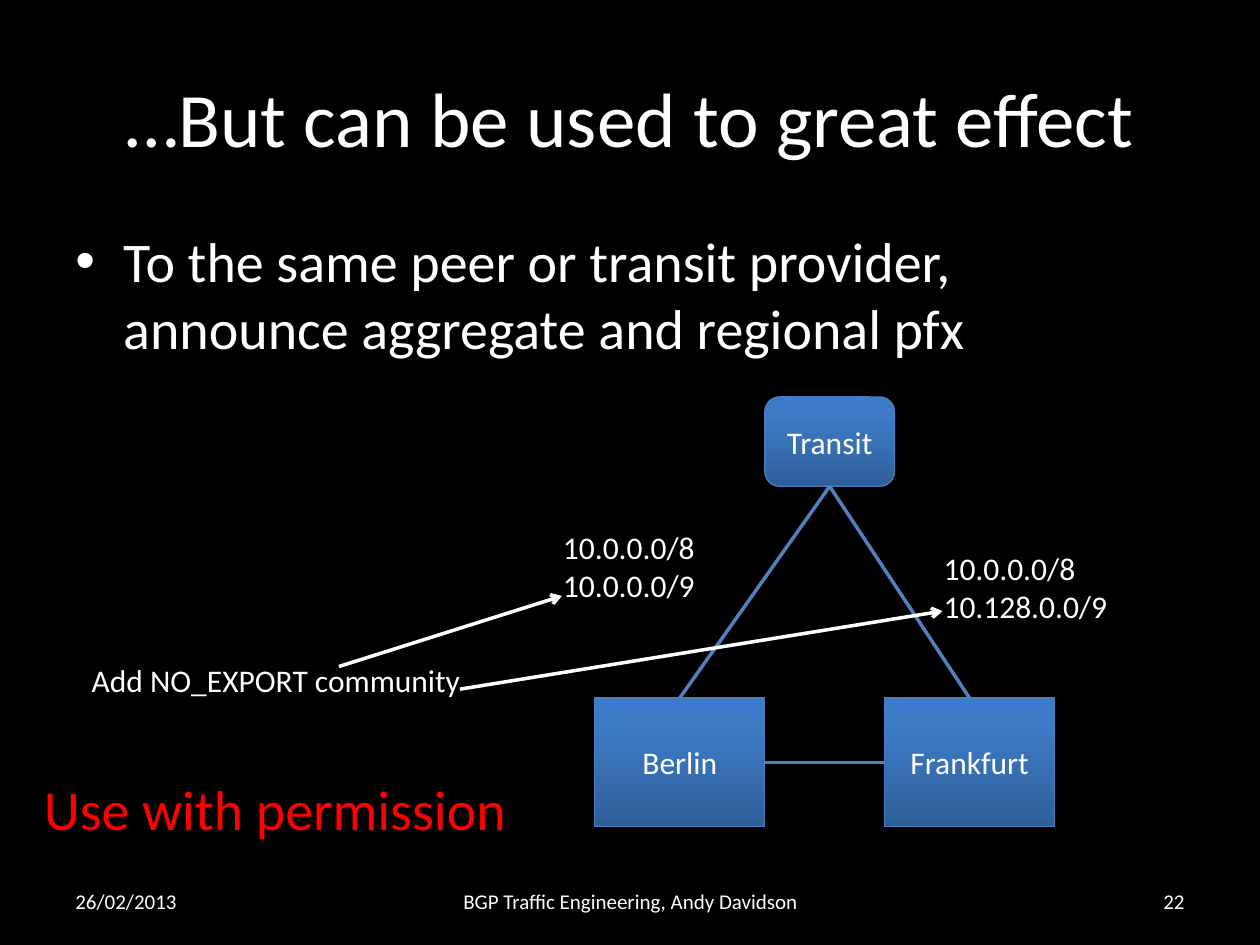
from copy import deepcopy

from pptx import Presentation
from pptx.dml.color import RGBColor
from pptx.enum.shapes import MSO_CONNECTOR, MSO_SHAPE
from pptx.enum.text import MSO_ANCHOR, MSO_AUTO_SIZE, PP_ALIGN
from pptx.oxml.ns import qn
from pptx.util import Inches, Pt
from lxml import etree

BLACK = RGBColor(0x00, 0x00, 0x00)
WHITE = RGBColor(0xFF, 0xFF, 0xFF)
RED = RGBColor(0xFF, 0x00, 0x00)
LINK_BLUE = RGBColor(0x4F, 0x81, 0xBD)
EDGE_BLUE = RGBColor(0x4B, 0x7E, 0xBC)
NODE_STOPS = (
    (0, RGBColor(0x2F, 0x5F, 0x99)),
    (0.8, RGBColor(0x3D, 0x7C, 0xC7)),
    (1, RGBColor(0x3A, 0x7C, 0xCB)),
)
LEFT, CENTER, RIGHT = PP_ALIGN.LEFT, PP_ALIGN.CENTER, PP_ALIGN.RIGHT
TOP, MIDDLE = MSO_ANCHOR.TOP, MSO_ANCHOR.MIDDLE
FIT_TEXT = MSO_AUTO_SIZE.SHAPE_TO_FIT_TEXT
RECTANGLE, ROUNDED = MSO_SHAPE.RECTANGLE, MSO_SHAPE.ROUNDED_RECTANGLE
STRAIGHT = MSO_CONNECTOR.STRAIGHT
SIDE_TOP, SIDE_LEFT, SIDE_BOTTOM, SIDE_RIGHT = range(4)


class SlideBuilder:
    font = "Calibri"
    label_size = 18
    line_width = 2

    def __init__(self, slide):
        self.slide = slide
        self.shapes = slide.shapes
        background = slide.background.fill
        background.solid()
        background.fore_color.rgb = BLACK

    def style_text(self, frame, text, size, color, align):
        frame.text = text
        for para in frame.paragraphs:
            para.alignment = align
            for span in para.runs:
                span.font.name = self.font
                span.font.size = Pt(size)
                span.font.color.rgb = color

    def text(self, text, place, size, align=LEFT, anchor=MIDDLE):
        box = self.shapes.add_textbox(*map(Inches, place))
        box.text_frame.word_wrap = True
        box.text_frame.vertical_anchor = anchor
        self.style_text(box.text_frame, text, size, WHITE, align)
        return box

    def bullet(self, text, place, size):
        box = self.text(text, place, size, anchor=TOP)
        para = box.text_frame.paragraphs[0]
        para.space_before = Pt(size * 0.2)
        properties = para._p.get_or_add_pPr()
        properties.set("marL", str(Inches(0.38)))
        properties.set("indent", str(-Inches(0.38)))
        etree.SubElement(properties, qn("a:buFont"), typeface="Arial")
        etree.SubElement(properties, qn("a:buChar"), char="•")

    def label(self, text, place, size=label_size, color=WHITE):
        box = self.shapes.add_textbox(*map(Inches, place))
        box.text_frame.word_wrap = False
        box.text_frame.auto_size = FIT_TEXT
        self.style_text(box.text_frame, text, size, color, LEFT)

    def node(self, text, place, preset=RECTANGLE):
        shape = self.shapes.add_shape(preset, *map(Inches, place))
        shape.shadow.inherit = False
        shape.fill.gradient()
        shape.fill.gradient_angle = 90
        stop_list = shape._element.spPr.find(qn("a:gradFill")).find(qn("a:gsLst"))
        stop_list.append(deepcopy(stop_list[-1]))
        for stop, (position, color) in zip(shape.fill.gradient_stops, NODE_STOPS):
            stop.position = position
            stop.color.rgb = color
        shape.line.color.rgb = EDGE_BLUE
        shape.line.width = Pt(0.75)
        shape.text_frame.vertical_anchor = MIDDLE
        self.style_text(shape.text_frame, text, self.label_size, WHITE, CENTER)
        return shape

    def line(self, color, start=(0, 0), end=(0, 0)):
        connector = self.shapes.add_connector(STRAIGHT, *map(Inches, start + end))
        connector.line.color.rgb = color
        connector.line.width = Pt(self.line_width)
        etree.SubElement(connector._element.spPr, qn("a:effectLst"))
        return connector

    def link(self, first, first_side, second, second_side):
        connector = self.line(LINK_BLUE)
        connector.begin_connect(first, first_side)
        connector.end_connect(second, second_side)

    def arrow(self, start, end):
        connector = self.line(WHITE, start, end)
        outline = connector._element.spPr.find(qn("a:ln"))
        etree.SubElement(outline, qn("a:tailEnd"), type="arrow")


def main():
    deck = Presentation()
    deck.slide_width, deck.slide_height = Inches(10), Inches(7.5)
    page = SlideBuilder(deck.slides.add_slide(deck.slide_layouts[6]))

    page.text("…But can be used to great effect", (0.5, 0.3, 9, 1.25), 44, CENTER)
    page.bullet(
        "To the same peer or transit provider, announce aggregate and regional pfx",
        (0.5, 1.75, 9, 1.23),
        32,
    )
    for text, left, width, align in (
        ("26/02/2013", 0.5, 2.33, LEFT),
        ("BGP Traffic Engineering, Andy Davidson", 3.42, 3.17, CENTER),
        ("22", 7.17, 2.33, RIGHT),
    ):
        page.text(text, (left, 6.95, width, 0.4), 12, align)

    berlin = page.node("Berlin", (4.72, 5.54, 1.35, 1.02))
    frankfurt = page.node("Frankfurt", (7.02, 5.54, 1.35, 1.02))
    transit = page.node("Transit", (6.07, 3.15, 1.03, 0.71), ROUNDED)
    page.link(berlin, SIDE_RIGHT, frankfurt, SIDE_LEFT)
    for city in (berlin, frankfurt):
        page.link(city, SIDE_TOP, transit, SIDE_BOTTOM)

    page.label("10.0.0.0/8\n10.0.0.0/9", (4.37, 4.14, 1.26, 0.71))
    page.label("10.0.0.0/8\n10.128.0.0/9", (7.39, 4.31, 1.51, 0.71))
    page.label("Add NO_EXPORT community", (0.63, 5.2, 3.16, 0.4))
    page.label("Use with permission", (0.25, 6.1, 3.91, 0.64), 32, RED)
    page.arrow((2.69, 5.29), (4.46, 4.73))
    page.arrow((3.65, 5.47), (7.48, 4.85))

    deck.save("out.pptx")


if __name__ == "__main__":
    main()
